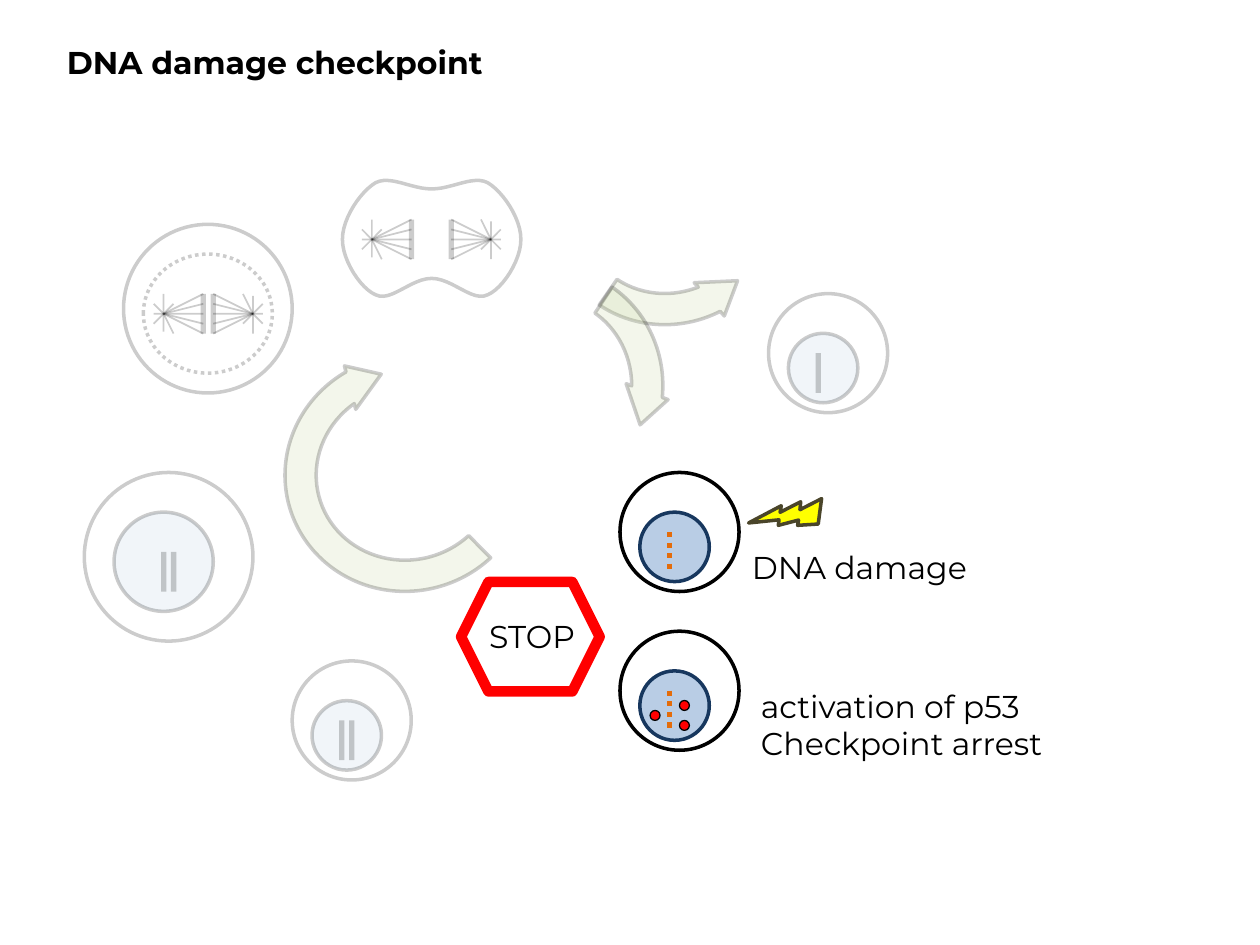
from lxml import etree
from pptx import Presentation
from pptx.dml.color import RGBColor
from pptx.enum import dml, shapes, text
from pptx.oxml.ns import qn
from pptx.util import Pt

THEME = dict(
    font="Montserrat", size=18, faint=20, black="000000", white="FFFFFF",
    nucleus="B9CDE5", nucleus_edge="17375E", damage="E46C0A", stop="FF0000",
    arrow="C3D69B", bolt="FFFF00", bolt_edge="4A452A",
)
UNIT = 5.67  # drawing grid step, in points

# Content: lengths in points; sizes inside cells in grid steps
TITLE = ("DNA damage checkpoint", 31, 20.9, 260, 29)
LABELS = [
    ("DNA damage", 422.6, 309.6, 143, 29, "LEFT"),
    ("STOP", 267, 349.2, 74, 29, "CENTER"),
    ("activation of p53\nCheckpoint arrest", 427.7, 388.8, 194, 51, "LEFT"),
]
SMALL = dict(cell=12, nucleus=(2, 4, 7), chromosome=(5, 6))
LARGE = dict(cell=17, nucleus=(3, 4, 10), chromosome=(8, 8))
# left, top, size, number of chromatids, damaged
CELLS = [
    (48.2, 270, LARGE, 2, False),
    (439.2, 167.8, SMALL, 1, False),
    (167, 377.7, SMALL, 2, False),
    (354.3, 270, SMALL, 1, True),
    (354.3, 360.7, SMALL, 1, True),
]
P53_DOTS = [(371.5, 406), (388.3, 400.3), (388.3, 411.7)]
# left, top, rotation, mirrored, start angle
ARROWS = [
    (311, 43.2, 227.9, True, 169.82),
    (239.8, 148.3, 20.7, False, 169.82),
    (161.3, 196.6, 255.4, False, 89.97),
]
METAPHASE = (70.6, 128.2)
# left pole, gap between the poles in grid steps
SPINDLES = [((212.5, 136.8), 12), ((93.5, 179.3), 9)]
FIBRES = [(4, y) for y in (-2, -1, 0, 1, 2)]
ASTER = [(0, 1.8), (-1, 0), (1, 2), (-1, 1), (-1, -1), (0, -2), (1, -1)]
# Dividing cell: right half of the outline, around its centre
DIVIDING_CENTRE = (246.7, 136.8)
DIVIDING_START = (0, -28.8)
DIVIDING_CURVES = [
    ((11.8, -28.8), (23.3, -36.7), (32, -32.4)),
    ((40.5, -27.4), (51, -12.2), (51, 0)),
    ((51, 12.2), (40.5, 28.1), (32, 31.7)),
    ((23.3, 36), (11.8, 22.3), (0, 22.3)),
]

prs = Presentation()
prs.slide_width, prs.slide_height = Pt(720), Pt(540)
slide = prs.slides.add_slide(prs.slide_layouts[5])
canvas = slide.shapes


def fade(color_parent):
    color = color_parent.find(".//" + qn("a:srgbClr"))
    etree.SubElement(color, qn("a:alpha"), val=str(THEME["faint"] * 1000))


def stroke(part, color, weight, faint=False, dotted=False):
    part.line.color.rgb = RGBColor.from_string(THEME[color])
    part.line.width = Pt(weight)
    if dotted:
        part.line.dash_style = dml.MSO_LINE.ROUND_DOT
    if faint:
        fade(part._element.spPr.find(qn("a:ln")))


def paint(part, fill, edge="black", weight=2, faint=False, dotted=False):
    part.shadow.inherit = False
    if fill is None:
        part.fill.background()
    else:
        part.fill.solid()
        part.fill.fore_color.rgb = RGBColor.from_string(THEME[fill])
        if faint and fill != "white":
            fade(part._element.spPr.find(qn("a:solidFill")))
    stroke(part, edge, weight, faint, dotted)
    return part


def add(kind, left, top, width, height, *look, **options):
    part = canvas.add_shape(kind, Pt(left), Pt(top), Pt(width), Pt(height))
    return paint(part, *look, **options)


def line(x1, y1, x2, y2, weight, color="black", faint=True, dotted=False):
    part = canvas.add_connector(
        shapes.MSO_CONNECTOR.STRAIGHT, Pt(x1), Pt(y1), Pt(x2), Pt(y2))
    stroke(part, color, weight, faint, dotted)
    etree.SubElement(part._element.spPr, qn("a:effectLst"))


def write(box, words, align="LEFT", bold=False):
    frame = box.text_frame
    frame.text = words
    frame.word_wrap = False
    frame.auto_size = text.MSO_AUTO_SIZE.NONE
    frame.vertical_anchor = text.MSO_ANCHOR.TOP
    for paragraph in frame.paragraphs:
        paragraph.alignment = getattr(text.PP_ALIGN, align)
        font = paragraph.font
        font.name, font.size, font.bold = THEME["font"], Pt(THEME["size"]), bold
        font.color.rgb = RGBColor.from_string(THEME["black"])


def cell(left, top, size, chromatids, damaged):
    faint = not damaged
    across = size["cell"] * UNIT
    add(shapes.MSO_SHAPE.OVAL, left, top, across, across, "white", faint=faint)
    dx, dy, diameter = (step * UNIT for step in size["nucleus"])
    add(shapes.MSO_SHAPE.OVAL, left + dx, top + dy, diameter, diameter, "nucleus",
        "nucleus_edge" if damaged else "black", faint=faint)
    dx, dy = (step * UNIT for step in size["chromosome"])
    for i in range(chromatids):
        x = left + dx + i * UNIT
        line(x, top + dy, x, top + dy + 4 * UNIT, 3,
             "damage" if damaged else "black", faint, damaged)


def spindle(pole, gap):
    for x, turn in ((pole[0], 1), (pole[0] + gap * UNIT, -1)):
        y, step = pole[1], turn * UNIT
        plate = x + 4 * step
        line(plate, y - 2 * UNIT, plate, y + 2 * UNIT, 3)
        for dx, dy in FIBRES + ASTER:
            line(x, y, x + dx * step, y + dy * step, 1)


def dividing_cell(steps=12):
    half = [DIVIDING_START]
    for c1, c2, end in DIVIDING_CURVES:
        start = half[-1]
        for t in (i / steps for i in range(1, steps + 1)):
            s = 1 - t
            half.append(tuple(
                s**3 * a + 3 * s * s * t * b + 3 * s * t * t * c + t**3 * d
                for a, b, c, d in zip(start, c1, c2, end)))
    outline = half + [(-x, y) for x, y in half[-2:0:-1]]
    cx, cy = DIVIDING_CENTRE
    points = [(Pt(cx + x), Pt(cy + y)) for x, y in outline]
    builder = canvas.build_freeform(*points[0])
    builder.add_line_segments(points[1:], close=True)
    paint(builder.convert_to_shape(), "white", faint=True)


# Title
heading, *place = TITLE
title = canvas.title
title.left, title.top, title.width, title.height = map(Pt, place)
write(title, heading, bold=True)

# Mitosis: dividing cell, metaphase cell and their spindles
dividing_cell()
left, top = METAPHASE
add(shapes.MSO_SHAPE.OVAL, left, top, 17 * UNIT, 17 * UNIT, "white", faint=True)
add(shapes.MSO_SHAPE.OVAL, left + 2 * UNIT, top + 3 * UNIT, 13 * UNIT, 12 * UNIT,
    None, faint=True, dotted=True)
for pole, gap in SPINDLES:
    spindle(pole, gap)

# Cells with a nucleus
for entry in CELLS:
    cell(*entry)
for x, y in P53_DOTS:
    add(shapes.MSO_SHAPE.OVAL, x, y, UNIT, UNIT, "stop", weight=0.75)

# Cycle arrows
for left, top, rotation, mirrored, start in ARROWS:
    arrow = add(shapes.MSO_SHAPE.CIRCULAR_ARROW, left, top, 142.6, 147.6, "arrow", faint=True)
    arrow.rotation = rotation
    for i, value in enumerate((1 / 8, 11.42, 204.58, start, 0.09)):
        arrow.adjustments[i] = value
    if mirrored:
        arrow._element.spPr.find(qn("a:xfrm")).set("flipH", "1")

# Damage bolt and stop sign
bolt = add(shapes.MSO_SHAPE.LIGHTNING_BOLT, 434.2, 276.5, 34, 34, "bolt", "bolt_edge")
bolt.rotation = 122.2
add(shapes.MSO_SHAPE.HEXAGON, 263.5, 332.6, 79.2, 62.6, "white", "stop", 6)

# Labels
for words, left, top, width, height, align in LABELS:
    write(canvas.add_textbox(Pt(left), Pt(top), Pt(width), Pt(height)), words, align)

prs.save("out.pptx")
